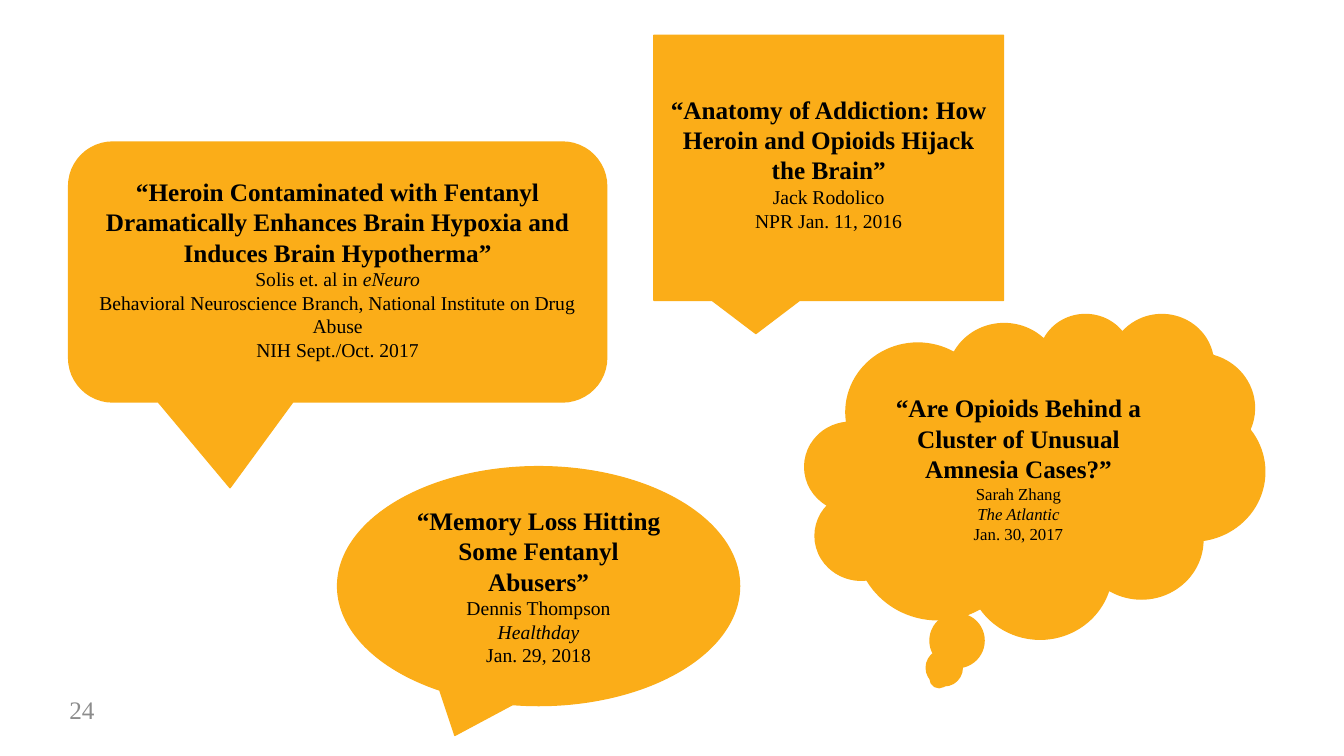
from pptx import Presentation, util as u
from pptx.dml.color import RGBColor
from pptx.enum import shapes, text

KIND = shapes.MSO_SHAPE


def color(value):
    return RGBColor.from_string(value)


def add_run(p, words, size=14, bold=False, italic=False, ink="000000", face="Times New Roman"):
    r = p.add_run()
    r.text = words
    f = r.font
    f.name, f.size, f.bold, f.italic = face, u.Pt(size), bold, italic
    f.color.rgb = color(ink)


class Deck:
    accent = "FBAD18"
    muted = "8C8C8C"
    title_size = 18

    def __init__(self, width, height):
        self.prs = Presentation()
        self.prs.slide_width, self.prs.slide_height = u.Cm(width), u.Cm(height)
        self.s = self.prs.slides.add_slide(self.prs.slide_layouts[6])

    def number(self, value, *box):
        tf = self.s.shapes.add_textbox(*map(u.Cm, box)).text_frame
        tf.word_wrap = True
        tf.vertical_anchor = text.MSO_ANCHOR.MIDDLE
        add_run(tf.paragraphs[0], value, size=self.title_size, ink=self.muted)

    def callout(self, kind, box, title, credits, size=14, bottom=0.13, adjust=()):
        sp = self.s.shapes.add_shape(kind, *map(u.Cm, box))
        sp.shadow.inherit = False
        sp.fill.solid()
        sp.fill.fore_color.rgb = color(self.accent)
        sp.line.color.rgb = color(self.accent)
        sp.line.width = u.Pt(1)
        for i, value in enumerate(adjust):
            sp.adjustments[i] = value
        tf = sp.text_frame
        tf.word_wrap = True
        tf.vertical_anchor = text.MSO_ANCHOR.MIDDLE
        tf.margin_bottom = u.Cm(bottom)
        p = tf.paragraphs[0]
        p.alignment = text.PP_ALIGN.CENTER
        add_run(p, title, size=self.title_size, bold=True)
        for plain, slanted in credits:
            p = tf.add_paragraph()
            p.alignment = text.PP_ALIGN.CENTER
            if plain:
                add_run(p, plain, size=size)
            if slanted:
                add_run(p, slanted, size=size, italic=True)


def main():
    deck = Deck(33.87, 19.05)
    deck.number("24", 1.5, 17.37, 1.5, 1.02)
    deck.callout(
        KIND.OVAL_CALLOUT, (8.51, 11.76, 10.13, 6.02),
        "“Memory Loss Hitting Some Fentanyl Abusers”",
        [("Dennis Thompson", ""), ("", "Healthday"), ("Jan. 29, 2018", "")])
    deck.callout(
        KIND.RECTANGULAR_CALLOUT, (16.48, 0.89, 8.81, 6.68),
        "“Anatomy of Addiction: How Heroin and Opioids Hijack the Brain”",
        [("Jack Rodolico", ""), ("NPR Jan. 11, 2016", "")], bottom=0.36)
    deck.callout(
        KIND.CLOUD_CALLOUT, (20.29, 7.9, 11.58, 8.18),
        "“Are Opioids Behind a Cluster of Unusual Amnesia Cases?”",
        [("Sarah Zhang", ""), ("", "The Atlantic"), ("Jan. 30, 2017", "")], size=12)
    deck.callout(
        KIND.ROUNDED_RECTANGULAR_CALLOUT, (1.73, 3.58, 13.56, 6.55),
        "“Heroin Contaminated with Fentanyl Dramatically Enhances Brain Hypoxia "
        "and Induces Brain Hypotherma”",
        [("Solis et. al in ", "eNeuro"),
         ("Behavioral Neuroscience Branch, National Institute on Drug Abuse", ""),
         ("NIH Sept./Oct. 2017", "")],
        bottom=0.28, adjust=(-0.2, 0.83, 0.17))
    deck.prs.save("out.pptx")


if __name__ == "__main__":
    main()
